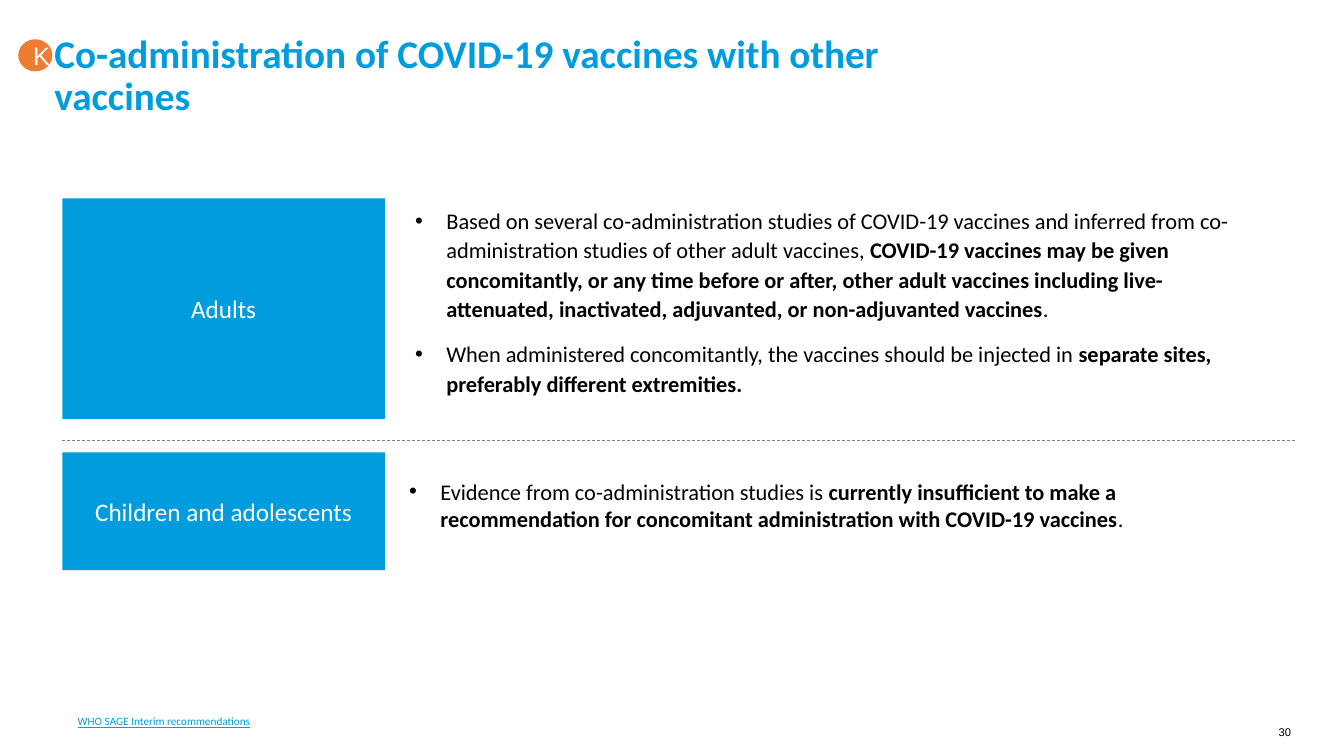
import pptx
import pptx.dml.color
import pptx.enum.dml
import pptx.enum.shapes
import pptx.enum.text
import pptx.util
from lxml import etree

Cm = pptx.util.Cm
Pt = pptx.util.Pt
Align = pptx.enum.text.PP_ALIGN
Anchor = pptx.enum.text.MSO_ANCHOR
Preset = pptx.enum.shapes.MSO_SHAPE
BLUE, ORANGE, GREY, BLACK, WHITE = "009CDE", "EE7D31", "808080", "000000", "FFFFFF"


def color(hex_code):
    return pptx.dml.color.RGBColor.from_string(hex_code)


def style(font, size, hex_code, name="Calibri", bold=False):
    font.name, font.size, font.bold = name, Pt(size), bold
    font.color.rgb = color(hex_code)


def add_frame(slide, left, top, width, height):
    """Add a wrapping text box without insets and return its text frame."""
    frame = slide.shapes.add_textbox(Cm(left), Cm(top), Cm(width), Cm(height)).text_frame
    frame.word_wrap = True
    frame.margin_left = frame.margin_right = frame.margin_top = frame.margin_bottom = 0
    return frame


def add_label(slide, preset, box, text, size, fill, font_name="Calibri"):
    shape = slide.shapes.add_shape(preset, *map(Cm, box))
    shape.shadow.inherit = False
    shape.fill.solid()
    shape.fill.fore_color.rgb = color(fill)
    shape.line.fill.background()
    frame = shape.text_frame
    frame.text = text
    frame.vertical_anchor = Anchor.MIDDLE
    frame.paragraphs[0].alignment = Align.CENTER
    style(frame.paragraphs[0].runs[0].font, size, WHITE, font_name)


def add_bullet(paragraph):
    properties = paragraph._p.get_or_add_pPr()
    properties.set("marL", str(Cm(1.35)))
    properties.set("indent", str(Cm(-0.79)))
    namespace = "{http://schemas.openxmlformats.org/drawingml/2006/main}"
    etree.SubElement(properties, namespace + "buFont", typeface="Arial")
    etree.SubElement(properties, namespace + "buChar", char="•")


def add_group_row(slide, box, group, points, text_offset, line_spacing):
    """Place a group label at the left of the box and its points beside it."""
    left, top, width, height = box
    add_label(slide, Preset.RECTANGLE, (left, top, 8.13, height), group, 18, BLUE)
    dx, dy = text_offset
    frame = add_frame(slide, left + dx, top + dy, width - dx, height - 2 * dy)
    for index, pieces in enumerate(points):
        paragraph = frame.paragraphs[0] if index == 0 else frame.add_paragraph()
        add_bullet(paragraph)
        paragraph.line_spacing = line_spacing
        paragraph.space_before = Pt(5 if index else 0)
        paragraph.space_after = Pt(6)
        for text, bold in pieces:
            run = paragraph.add_run()
            run.text = text
            style(run.font, 16, BLACK, bold=bold)


def add_heading(slide, left, top, width, height):
    badge = 0.86
    add_label(slide, Preset.OVAL, (left, top, badge, 0.81), "K", 18, ORANGE, "Arial")
    frame = add_frame(slide, left + badge, top, width - badge, height)
    frame.margin_left, frame.margin_right = Cm(0.05), Cm(1)
    frame.vertical_anchor = Anchor.BOTTOM
    frame.text = "Co-administration of COVID-19 vaccines with other vaccines"
    frame.paragraphs[0].line_spacing = 0.9
    style(frame.paragraphs[0].runs[0].font, 28, BLUE, bold=True)


def add_divider(slide, left, top, width):
    divider = slide.shapes.add_connector(
        pptx.enum.shapes.MSO_CONNECTOR.STRAIGHT, Cm(left), Cm(top), Cm(left + width), Cm(top))
    divider.line.color.rgb = color(GREY)
    divider.line.width = Pt(0.5)
    divider.line.dash_style = pptx.enum.dml.MSO_LINE.DASH
    properties = divider._element.spPr
    etree.SubElement(properties, pptx.oxml.ns.qn("a:effectLst"))


def add_footer(slide, left, top, width, height):
    source = add_frame(slide, left, top, width / 2, height)
    source.text = "WHO SAGE Interim recommendations"
    source_font = source.paragraphs[0].runs[0].font
    style(source_font, 8, BLUE)
    source_font.underline = True
    page = add_frame(slide, left + width - 0.81, top + 0.28, 0.81, height)
    page.text = "30"
    page.paragraphs[0].alignment = Align.RIGHT
    style(page.paragraphs[0].runs[0].font, 8, BLACK, "Arial")


ADULT_POINTS = [
    [("Based on several co-administration studies of COVID-19 vaccines and inferred from "
      "co-administration studies of other adult vaccines, ", False),
     ("COVID-19 vaccines may be given concomitantly, or any time before or after, other adult "
      "vaccines including live-attenuated, inactivated, adjuvanted, or non-adjuvanted vaccines",
      True),
     (".", False)],
    [("When administered concomitantly, the vaccines should be injected in ", False),
     ("separate sites, preferably different extremities.", True)],
]
CHILD_POINTS = [
    [("Evidence from co-administration studies is ", False),
     ("currently insufficient to make a recommendation for concomitant administration with "
      "COVID-19 vaccines", True),
     (".", False)],
]


def main():
    deck = pptx.Presentation()
    deck.slide_width, deck.slide_height = Cm(33.87), Cm(19.05)
    slide = deck.slides.add_slide(deck.slide_layouts[6])
    left = 1.57
    add_heading(slide, 0.46, 0.99, 23.52, 2.01)
    add_group_row(slide, (left, 5, 30.28, 5.56), "Adults", ADULT_POINTS, (8.33, 0.15), 1.1)
    add_divider(slide, left, 11.1, 31.12)
    add_group_row(slide, (left, 11.4, 29.87, 2.97), "Children and adolescents",
                  CHILD_POINTS, (8.18, 0.64), 1.0)
    add_footer(slide, 1.96, 18.01, 30.58, 0.5)
    deck.save("out.pptx")


if __name__ == "__main__":
    main()
